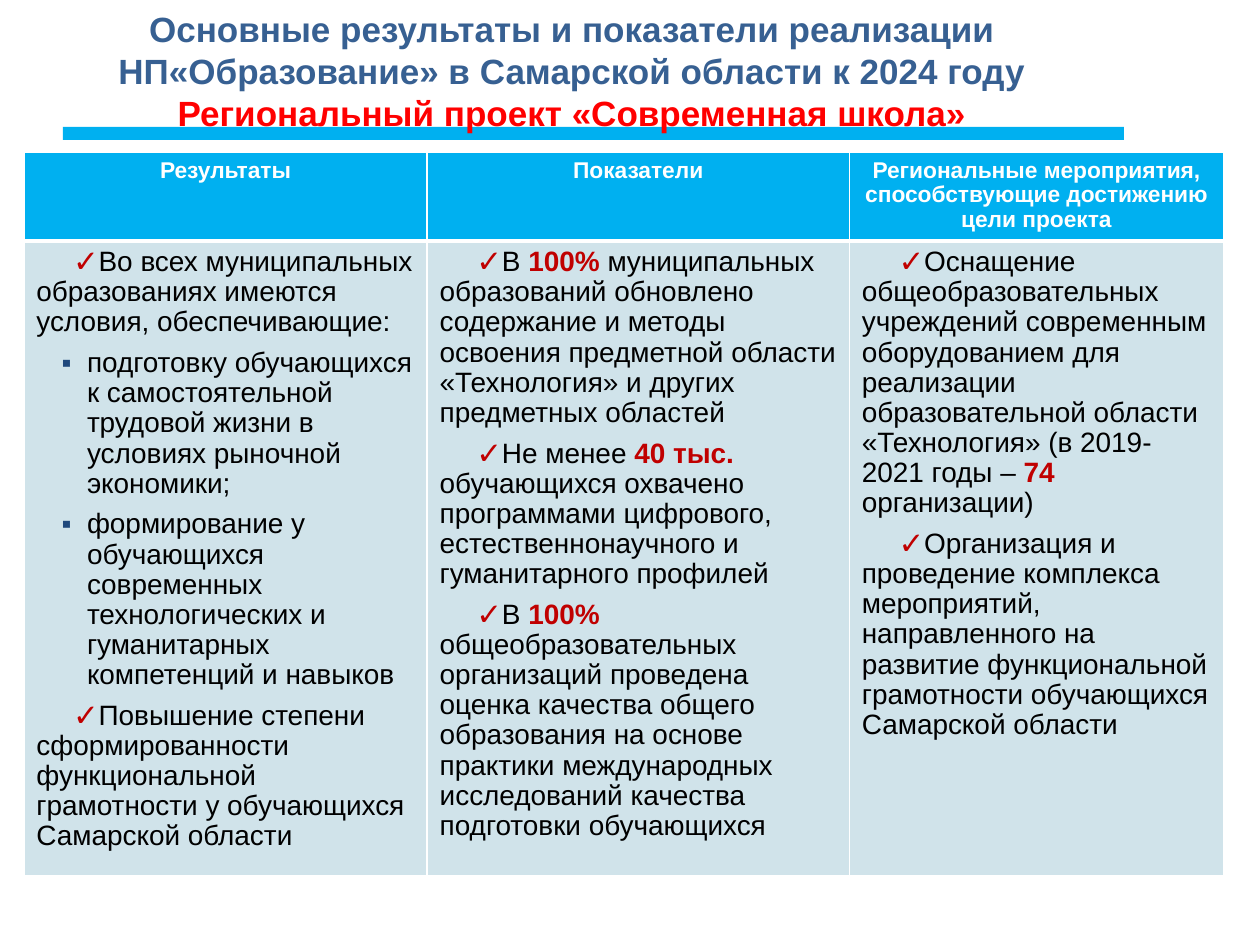
from lxml.etree import SubElement
from pptx import Presentation
from pptx.dml.color import RGBColor
from pptx.enum.shapes import MSO_SHAPE
from pptx.enum.text import PP_ALIGN
from pptx.oxml.ns import qn
from pptx.util import Cm, Pt

WHITE = RGBColor(0xFF, 0xFF, 0xFF)
BLACK = RGBColor(0, 0, 0)
SKY = RGBColor(0x00, 0xB0, 0xF0)
PALE = RGBColor(0xD0, 0xE3, 0xEA)
STEEL = RGBColor(0x37, 0x60, 0x92)
NAVY = RGBColor(0x1F, 0x49, 0x7D)
RED = RGBColor(0xFF, 0, 0)
DARK = RGBColor(0xC0, 0, 0)

# Bullet style: sign, colour, size in %, left margin, first-line indent
TICK = ("✓", DARK, 110, Cm(0), Cm(0.74))
SQUARE = ("▪", NAVY, 100, Cm(1.02), Cm(-0.51))

HEADS = [
    "Результаты",
    "Показатели",
    "Региональные мероприятия, способствующие достижению цели проекта",
]
# Every second run of a paragraph is a highlighted figure.
BODY = [
    [
        (TICK, ["Во всех муниципальных образованиях имеются условия, обеспечивающие:"]),
        (SQUARE, ["подготовку обучающихся к самостоятельной трудовой жизни "
                  "в условиях рыночной экономики;"]),
        (SQUARE, ["формирование у обучающихся современных технологических "
                  "и гуманитарных компетенций и навыков"]),
        (TICK, ["Повышение степени сформированности функциональной грамотности "
                "у обучающихся Самарской области"]),
    ],
    [
        (TICK, ["В ", "100% ", "муниципальных образований обновлено содержание и методы "
                "освоения предметной области «Технология» и других предметных областей"]),
        (TICK, ["Не менее ", "40 тыс. ", "обучающихся охвачено программами цифрового, "
                "естественнонаучного и гуманитарного профилей"]),
        (TICK, ["В ", "100% ", "общеобразовательных организаций проведена оценка качества "
                "общего образования на основе практики международных исследований "
                "качества подготовки обучающихся"]),
    ],
    [
        (TICK, ["Оснащение общеобразовательных учреждений современным оборудованием "
                "для реализации образовательной области «Технология» "
                "(в 2019-2021 годы – ", "74 ", "организации)"]),
        (TICK, ["Организация и проведение комплекса мероприятий, направленного на развитие "
                "функциональной грамотности обучающихся Самарской области"]),
    ],
]


def add_run(para, text, size, color, bold):
    run = para.add_run()
    run.text = text
    font = run.font
    font.name, font.size, font.bold = "Arial", Pt(size), bold
    font.color.rgb = color


def next_para(frame, index):
    return frame.add_paragraph() if index else frame.paragraphs[0]


def set_bullet(para, style):
    sign, color, size, left, indent = style
    props = para._p.get_or_add_pPr()
    props.set("marL", str(left))
    props.set("indent", str(indent))
    tint = SubElement(props, qn("a:buClr"))
    SubElement(tint, qn("a:srgbClr"), val=str(color))
    SubElement(props, qn("a:buSzPct"), val=str(size * 1000))
    SubElement(props, qn("a:buFont"), typeface="Arial")
    SubElement(props, qn("a:buChar"), char=sign)


def paint_cell(cell, color, top, bottom):
    """Fill the cell and draw white borders; top and bottom are in points."""
    props = cell._tc.get_or_add_tcPr()
    for side, width in (("L", 1), ("R", 1), ("T", top), ("B", bottom)):
        line = SubElement(props, qn("a:ln" + side), w=str(Pt(width)))
        fill = SubElement(line, qn("a:solidFill"))
        SubElement(fill, qn("a:srgbClr"), val=str(WHITE))
    cell.fill.solid()
    cell.fill.fore_color.rgb = color


def add_bar(slide):
    bar = slide.shapes.add_shape(MSO_SHAPE.RECTANGLE, Cm(1.27), Cm(2.56), Cm(21.39), Cm(0.26))
    bar.shadow.inherit = False
    bar.fill.solid()
    bar.fill.fore_color.rgb = SKY
    bar.line.fill.background()


def add_title(slide):
    frame = slide.shapes.add_textbox(0, 0, Cm(23.06), Cm(2.72)).text_frame
    frame.word_wrap = True
    frame.margin_top = Cm(0.15)
    lines = [
        ("Основные результаты и показатели реализации "
         "НП«Образование» в Самарской области к 2024 году", STEEL),
        ("Региональный проект «Современная школа»", RED),
    ]
    for index, (text, color) in enumerate(lines):
        para = next_para(frame, index)
        para.alignment = PP_ALIGN.CENTER
        para.line_spacing = Pt(24)
        add_run(para, text, 20, color, True)


def fill_head(cell, text):
    paint_cell(cell, SKY, 1, 3)
    para = cell.text_frame.paragraphs[0]
    para.alignment = PP_ALIGN.CENTER
    para.line_spacing = 0.97
    add_run(para, text, 13, WHITE, True)


def fill_body(cell, items):
    paint_cell(cell, PALE, 3, 1)
    for index, (style, texts) in enumerate(items):
        para = next_para(cell.text_frame, index)
        set_bullet(para, style)
        para.line_spacing = 0.97
        para.space_before = Pt(6 if index else 0)
        for place, text in enumerate(texts):
            strong = place % 2 == 1
            add_run(para, text, 16, DARK if strong else BLACK, strong)


def add_grid(slide):
    widths = [Cm(8.13), Cm(8.51), Cm(7.54)]
    heights = [Cm(1.79), Cm(12.8)]
    table = slide.shapes.add_table(
        2, 3, Cm(0.48), Cm(3.07), sum(widths), sum(heights)).table
    for row, height in zip(table.rows, heights):
        row.height = height
    for col, width in enumerate(widths):
        table.columns[col].width = width
        fill_head(table.cell(0, col), HEADS[col])
        fill_body(table.cell(1, col), BODY[col])


def main():
    deck = Presentation()
    deck.slide_width, deck.slide_height = Cm(25.4), Cm(19.05)
    slide = deck.slides.add_slide(deck.slide_layouts[6])
    add_bar(slide)
    add_grid(slide)
    add_title(slide)
    deck.save("out.pptx")


if __name__ == "__main__":
    main()
